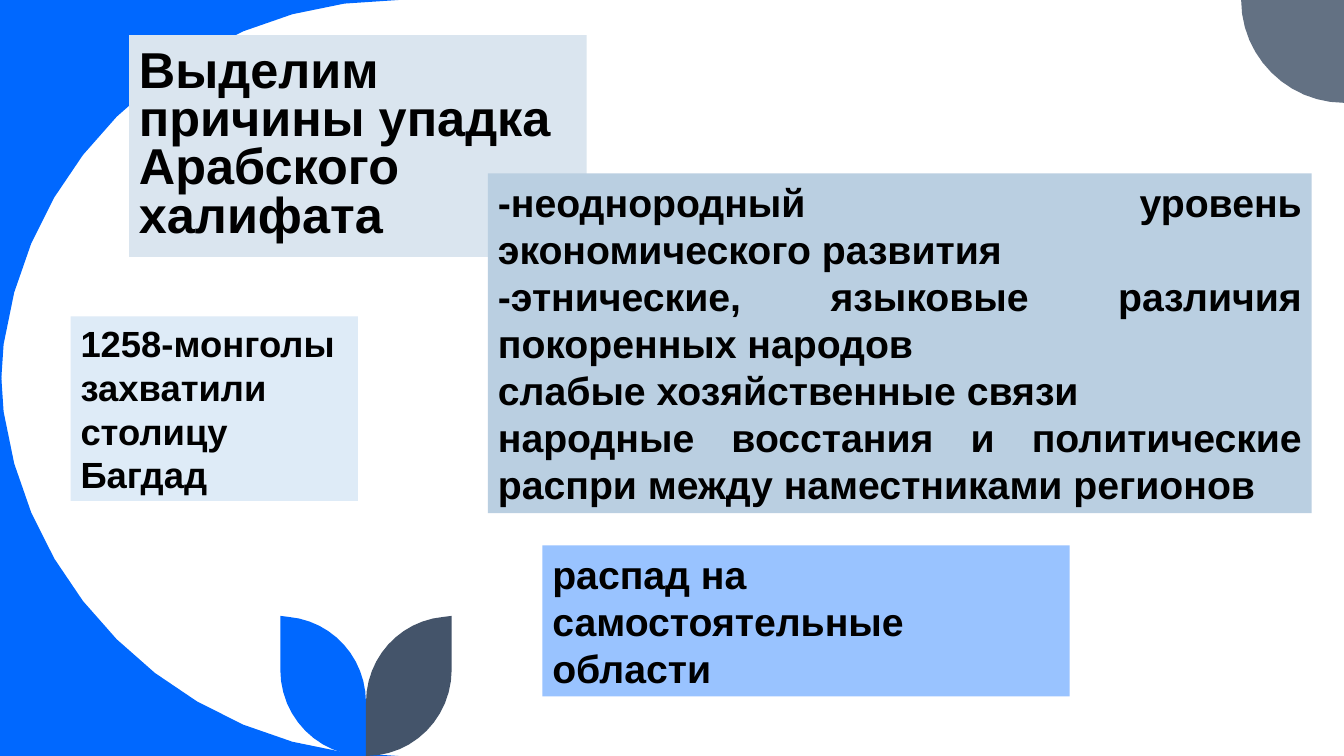
from dataclasses import dataclass

import pptx
import pptx.dml.color
import pptx.enum.shapes
import pptx.enum.text
import pptx.util

Inches = pptx.util.Inches
Align = pptx.enum.text.PP_ALIGN
Anchor = pptx.enum.text.MSO_ANCHOR

WIDTH, HEIGHT = 13.33, 7.5
LEAF_AXIS = 3.63
CURVE_STEPS = 12
COLORS = {
    "blue": "0068FF",
    "slate": "44546A",
    "gray": "637183",
    "title": "DAE5EF",
    "causes": "BACFE1",
    "result": "99C3FF",
    "event": "DEEBF7",
    "text": "000000",
}

Point = tuple[float, float]


@dataclass
class Card:
    left: float
    top: float
    width: float
    height: float
    color: str
    size: float
    paragraphs: list[str]
    align: Align = Align.LEFT
    anchor: Anchor = Anchor.TOP
    line_spacing: float = 1.0
    grow: bool = True


@dataclass
class Ornament:
    points: list[Point]
    color: str


def curve(start: Point, control_1: Point, control_2: Point, end: Point) -> list[Point]:
    """Return points along a cubic Bezier curve, both ends included."""
    points = []
    for step in range(CURVE_STEPS + 1):
        t = step / CURVE_STEPS
        weights = ((1 - t) ** 3, 3 * t * (1 - t) ** 2, 3 * t * t * (1 - t), t ** 3)
        corners = (start, control_1, control_2, end)
        points.append((sum(w * x for w, (x, _) in zip(weights, corners)),
                       sum(w * y for w, (_, y) in zip(weights, corners))))
    return points


def mirror_x(points: list[Point], axis: float) -> list[Point]:
    return [(2 * axis - x, y) for x, y in points]


def mirror_y(points: list[Point], axis: float) -> list[Point]:
    return [(x, 2 * axis - y) for x, y in points]


def set_fill(shape, color: str) -> None:
    shape.shadow.inherit = False
    shape.fill.solid()
    shape.fill.fore_color.rgb = pptx.dml.color.RGBColor.from_string(COLORS[color])
    shape.line.fill.background()


def draw_ornament(slide, ornament: Ornament) -> None:
    start, *others = [(Inches(x), Inches(y)) for x, y in ornament.points]
    builder = slide.shapes.build_freeform(*start)
    builder.add_line_segments(others, close=True)
    set_fill(builder.convert_to_shape(), ornament.color)


def write_text(paragraph, text: str, *, size: float, align: Align,
               line_spacing: float, color: str = "text") -> None:
    paragraph.alignment = align
    paragraph.line_spacing = line_spacing
    run = paragraph.add_run()
    run.text = text
    run.font.name = "Arial"
    run.font.size = pptx.util.Pt(size)
    run.font.bold = True
    run.font.color.rgb = pptx.dml.color.RGBColor.from_string(COLORS[color])


def draw_card(slide, card: Card) -> None:
    shape = slide.shapes.add_shape(
        pptx.enum.shapes.MSO_SHAPE.RECTANGLE,
        Inches(card.left), Inches(card.top), Inches(card.width), Inches(card.height))
    set_fill(shape, card.color)
    frame = shape.text_frame
    frame.word_wrap = True
    frame.vertical_anchor = card.anchor
    sizing = pptx.enum.text.MSO_AUTO_SIZE
    frame.auto_size = sizing.SHAPE_TO_FIT_TEXT if card.grow else sizing.NONE
    for index, text in enumerate(card.paragraphs):
        paragraph = frame.add_paragraph() if index else frame.paragraphs[0]
        write_text(paragraph, text, size=card.size, align=card.align,
                   line_spacing=card.line_spacing)


# Background ornaments
LEFT_CORNER = [(0, 0), *curve((3.95, 0), (1.77, 0), (0, 1.77), (0, 3.95))]
RIGHT_CORNER = [(WIDTH, 0),
                *curve((12.31, 0), (12.31, 0.56), (12.77, 1.02), (WIDTH, 1.02))]
LEAF = [(2.78, 6.11),
        *curve((2.78, 6.64), (2.78, 7.12), (3.16, 7.5), (LEAF_AXIS, 7.5)),
        *curve((LEAF_AXIS, 6.97), (LEAF_AXIS, 6.53), (3.3, 6.16), (2.86, 6.12))]
ORNAMENTS = [
    Ornament(LEFT_CORNER, "blue"),
    Ornament(mirror_y(LEFT_CORNER, HEIGHT / 2), "blue"),
    Ornament(RIGHT_CORNER, "gray"),
    Ornament(LEAF, "blue"),
    Ornament(mirror_x(LEAF, LEAF_AXIS), "slate"),
]

# Text cards, from back to front
CARDS = [
    Card(1.28, 0.35, 4.54, 2.2, "title", 36,
         ["Выделим причины упадка Арабского халифата"],
         anchor=Anchor.MIDDLE, line_spacing=0.8, grow=False),
    Card(4.84, 1.72, 8.17, 3.37, "causes", 28,
         ["-неоднородный уровень экономического развития",
          "-этнические, языковые различия покоренных народов",
          "слабые хозяйственные связи",
          "народные восстания и политические распри между наместниками регионов"],
         align=Align.JUSTIFY),
    Card(5.38, 5.41, 5.23, 1.5, "result", 28,
         ["распад на самостоятельные области"]),
    Card(0.7, 3.14, 2.85, 1.83, "event", 26,
         ["1258-монголы захватили столицу Багдад"]),
]


def main() -> None:
    presentation = pptx.Presentation()
    presentation.slide_width = Inches(WIDTH)
    presentation.slide_height = Inches(HEIGHT)
    slide = presentation.slides.add_slide(presentation.slide_layouts[6])
    for ornament in ORNAMENTS:
        draw_ornament(slide, ornament)
    for card in CARDS:
        draw_card(slide, card)
    presentation.save("out.pptx")


if __name__ == "__main__":
    main()
